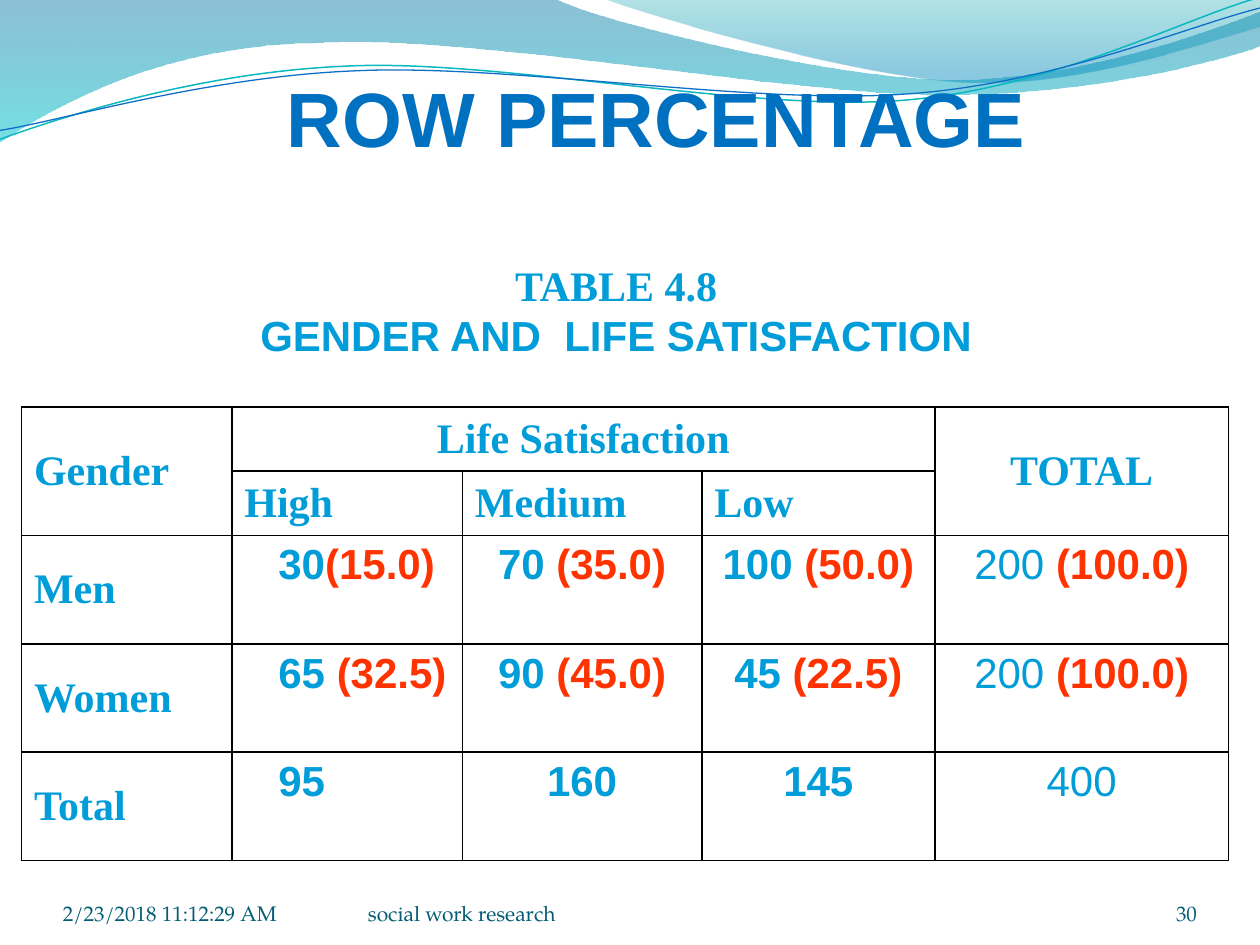
from dataclasses import dataclass

from lxml.etree import SubElement
from pptx import Presentation
from pptx.dml.color import RGBColor
from pptx.enum.text import MSO_ANCHOR, PP_ALIGN
from pptx.oxml import parse_xml
from pptx.oxml.ns import nsdecls, qn
from pptx.util import Emu, Pt

EMU_PER_PX = 9144  # 100 px to the inch


@dataclass(frozen=True)
class Theme:
    title: str = "0070C0"
    text: str = "009DD9"
    percent: str = "FF3300"
    footer: str = "045D75"
    border: str = "000000"
    teal_line: str = "0AB8BF"
    blue_line: str = "0F6FC6"
    band: tuple = ((0, "0074A1", 45), (1, "00C6CF", 55))  # position, color, opacity
    crest: tuple = ((0, "00A1A9", 30), (0.8, "008BBF", 45))
    sans: str = "Arial"
    serif: str = "Times New Roman"
    footer_font: str = "TeX Gyre Pagella"
    title_size: int = 44
    body_size: int = 24
    footer_size: int = 12


THEME = Theme()

# Waves: a start, then steps of one point (line) or three points (cubic curve)
BAND = [[(0, -1)], [(440, -1)],
        [(476, 17), (664, 63), (758, 63)], [(853, 63), (958, 26), (1000, 9)],
        [(1001, 36)],
        [(983, 44), (870, 76), (746, 75)], [(622, 75), (382, 28), (257, 34)],
        [(129, 35), (46, 83), (-1, 113)]]
CREST = [[(479, -1)], [(509, 11), (682, 62), (769, 65)],
         [(856, 69), (961, 32), (1000, 21)], [(1000, 0)]]
TEAL_LINE = [[(-2, 87)], [(47, 72), (158, 41), (277, 42)],
             [(396, 42), (591, 93), (712, 90)], [(832, 87), (940, 36), (1000, 22)]]
BLUE_LINE = [[(-2, 80)], [(46, 75), (164, 45), (283, 46)],
             [(403, 46), (596, 88), (716, 85)], [(835, 83), (942, 42), (1002, 30)]]
LINE_ROTATION = 357.3

COLUMN_WIDTHS = [167, 183, 190, 185, 233]
ROW_HEIGHTS = [51, 51, 86, 86, 86]
LEVELS = ["High", "Medium", "Low"]
COUNTS = [
    ("Men", [("30", "(15.0)"), ("70 ", "(35.0)"), ("100 ", "(50.0)"), ("200 ", "(100.0)")]),
    ("Women", [("65 ", "(32.5)"), ("90 ", "(45.0)"), ("45 ", "(22.5)"), ("200 ", "(100.0)")]),
    ("Total", [("95",), ("160",), ("145",), ("400",)]),
]


def px(length):
    return Emu(length * EMU_PER_PX)


def rgb(color):
    return RGBColor.from_string(color)


def style_run(run, font, size, color, bold=True):
    run.font.name = font
    run.font.size = Pt(size)
    run.font.color.rgb = rgb(color)
    run.font.bold = bold


def add_outline(slide, steps, close):
    """Add a freeform behind the title, turning steps of three points into curves."""
    start, *points = [point for step in steps for point in step]
    builder = slide.shapes.build_freeform(*start, scale=EMU_PER_PX)
    builder.add_line_segments(points, close=close)
    shape = builder.convert_to_shape()
    shape.shadow.inherit = False

    segments = iter(shape.element.xpath(".//a:lnTo"))
    for step in steps[1:]:
        parts = [next(segments) for _ in step]
        if len(parts) == 3:
            curve = parse_xml(f'<a:cubicBezTo {nsdecls("a")}/>')
            parts[0].addprevious(curve)
            for part in parts:
                curve.append(part[0])
                part.getparent().remove(part)

    slide.shapes.title.element.addprevious(shape.element)
    return shape


def add_wave(slide, steps, stops):
    shape = add_outline(slide, steps, close=True)
    shape.line.fill.background()
    shape.fill.gradient()
    shape.fill.gradient_angle = 270
    for stop, (position, color, _) in zip(shape.fill.gradient_stops, stops):
        stop.position = position
        stop.color.rgb = rgb(color)
    colors = shape.element.xpath(".//a:gs/a:srgbClr")
    for element, (_, _, opacity) in zip(colors, stops):
        SubElement(element, qn("a:alpha")).set("val", str(opacity * 1000))


def add_wave_line(slide, steps, color, width):
    shape = add_outline(slide, steps, close=False)
    shape.rotation = LINE_ROTATION
    shape.fill.background()
    shape.line.color.rgb = rgb(color)
    shape.line.width = Pt(width)


def set_title(slide, text):
    title = slide.shapes.title
    title.left, title.top, title.width, title.height = map(px, (92, 30, 858, 125))
    frame = title.text_frame
    frame.text = text
    frame.vertical_anchor = MSO_ANCHOR.MIDDLE
    frame.paragraphs[0].alignment = PP_ALIGN.CENTER
    style_run(frame.paragraphs[0].runs[0], THEME.sans, THEME.title_size, THEME.title)


def add_text(slide, box, lines, size, color, bold, alignment, anchor):
    """Add a text box without insets; lines are (text, font) pairs."""
    frame = slide.shapes.add_textbox(*map(px, box)).text_frame
    frame.word_wrap = True
    frame.margin_left = frame.margin_right = frame.margin_top = frame.margin_bottom = 0
    frame.vertical_anchor = anchor
    frame.text = "\n".join(text for text, _ in lines)
    for paragraph, (_, font) in zip(frame.paragraphs, lines):
        paragraph.alignment = alignment
        style_run(paragraph.runs[0], font, size, color, bold)


def add_footer(slide, left, width, text, alignment=PP_ALIGN.LEFT):
    add_text(slide, (left, 695, width, 40), [(text, THEME.footer_font)],
             THEME.footer_size, THEME.footer, False, alignment, MSO_ANCHOR.BOTTOM)


def set_borders(cell):
    properties = cell._tc.get_or_add_tcPr()
    for index, side in enumerate(("lnL", "lnR", "lnT", "lnB")):
        properties.insert(index, parse_xml(
            f'<a:{side} {nsdecls("a")} w="12700"><a:solidFill>'
            f'<a:srgbClr val="{THEME.border}"/></a:solidFill></a:{side}>'))


def set_label(cell, text, alignment=PP_ALIGN.LEFT):
    cell.text = text
    cell.vertical_anchor = MSO_ANCHOR.MIDDLE
    paragraph = cell.text_frame.paragraphs[0]
    paragraph.alignment = alignment
    style_run(paragraph.runs[0], THEME.serif, THEME.body_size, THEME.text)


def set_count(cell, parts, column):
    """Write a count and its percentage; the first column of counts is indented."""
    paragraph = cell.text_frame.paragraphs[0]
    paragraph.alignment = PP_ALIGN.CENTER
    if column == 1:
        paragraph.alignment = PP_ALIGN.LEFT
        cell.margin_left, cell.margin_right = px(37), px(5)
    is_total = column == len(COLUMN_WIDTHS) - 1
    for index, part in enumerate(parts):
        run = paragraph.add_run()
        run.text = part
        color = THEME.percent if index else THEME.text
        style_run(run, THEME.sans, THEME.body_size, color, bool(index) or not is_total)


def add_percentage_table(slide):
    box = (17, 323, sum(COLUMN_WIDTHS), sum(ROW_HEIGHTS))
    table = slide.shapes.add_table(len(ROW_HEIGHTS), len(COLUMN_WIDTHS), *map(px, box)).table
    table.first_row = table.horz_banding = False
    for column, width in zip(table.columns, COLUMN_WIDTHS):
        column.width = px(width)
    for row, height in zip(table.rows, ROW_HEIGHTS):
        row.height = px(height)
    for cell in table.iter_cells():
        cell.fill.background()
        set_borders(cell)

    # Header rows
    for first, last in (((0, 0), (1, 0)), ((0, 1), (0, 3)), ((0, 4), (1, 4))):
        table.cell(*first).merge(table.cell(*last))
    set_label(table.cell(0, 0), "Gender")
    set_label(table.cell(0, 1), "Life Satisfaction", PP_ALIGN.CENTER)
    set_label(table.cell(0, 4), "TOTAL", PP_ALIGN.CENTER)
    for column, level in enumerate(LEVELS, 1):
        set_label(table.cell(1, column), level)

    # Body rows
    for row, (label, counts) in enumerate(COUNTS, 2):
        set_label(table.cell(row, 0), label)
        for column, parts in enumerate(counts, 1):
            set_count(table.cell(row, column), parts, column)


def main():
    presentation = Presentation()
    presentation.slide_width, presentation.slide_height = px(1000), px(750)
    slide = presentation.slides.add_slide(presentation.slide_layouts[5])

    # Waves along the top
    add_wave(slide, BAND, THEME.band)
    add_wave(slide, CREST, THEME.crest)
    add_wave_line(slide, TEAL_LINE, THEME.teal_line, 0.85)
    add_wave_line(slide, BLUE_LINE, THEME.blue_line, 0.75)

    # Title, caption and table
    set_title(slide, "ROW PERCENTAGE")
    caption = [("TABLE 4.8", THEME.serif), ("GENDER AND  LIFE SATISFACTION", THEME.sans)]
    add_text(slide, (204, 166, 570, 160), caption, THEME.body_size, THEME.text, True,
             PP_ALIGN.CENTER, MSO_ANCHOR.MIDDLE)
    add_percentage_table(slide)

    # Footer
    add_footer(slide, 50, 233, "2/23/2018 11:12:29 AM")
    add_footer(slide, 292, 367, "social work research")
    add_footer(slide, 867, 83, "30", PP_ALIGN.RIGHT)
    presentation.save("out.pptx")


if __name__ == "__main__":
    main()
